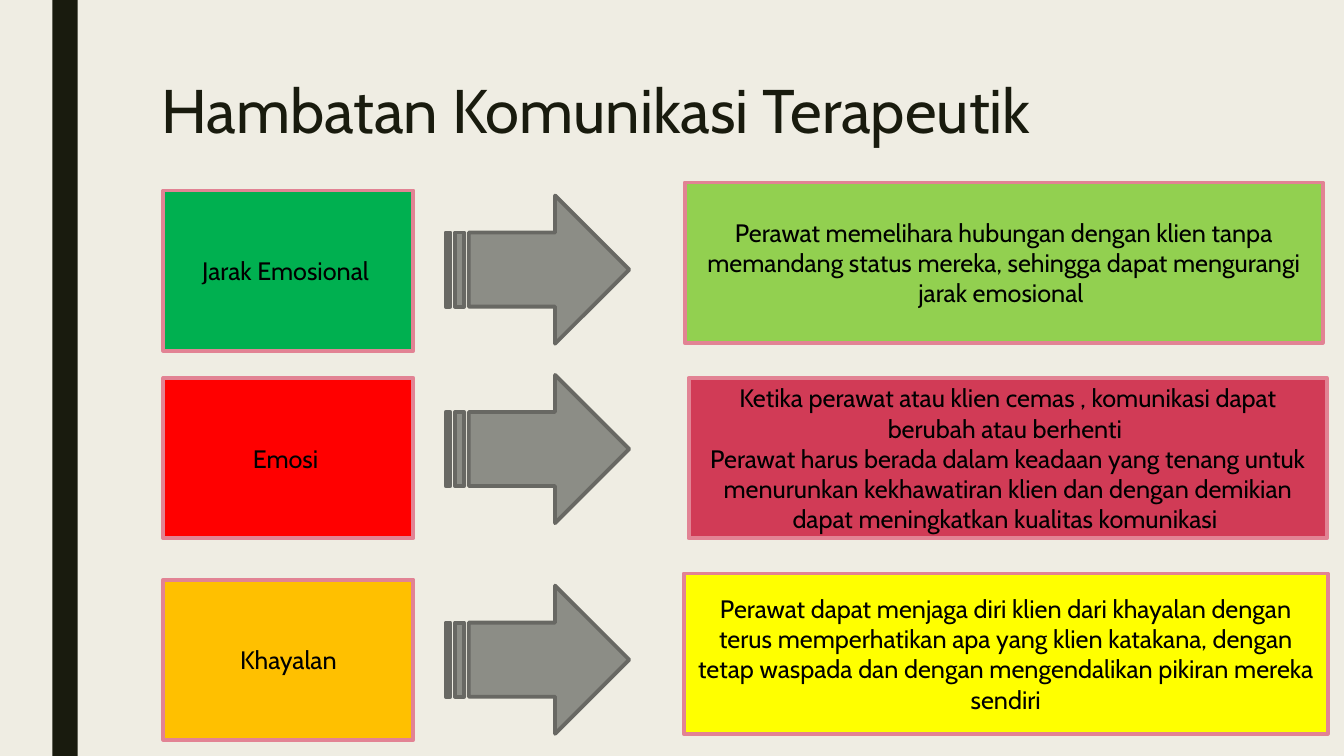
from pptx import Presentation
from pptx.dml.color import RGBColor
from pptx.enum.shapes import MSO_SHAPE
from pptx.enum.text import MSO_ANCHOR, MSO_AUTO_SIZE, PP_ALIGN
from pptx.util import Pt

RECT, ARROW = MSO_SHAPE.RECTANGLE, MSO_SHAPE.STRIPED_RIGHT_ARROW
TOP, MIDDLE = MSO_ANCHOR.TOP, MSO_ANCHOR.MIDDLE
LEFT, CENTER = PP_ALIGN.LEFT, PP_ALIGN.CENTER
NO_FIT = MSO_AUTO_SIZE.NONE

PX = 9144  # 100 px to the inch
THEME = {
    "font": "Cabin", "title": 44, "body": 18, "edge": 2.75,
    "paper": "EFEDE3", "ink": "191B0E", "text": "000000",
    "pink": "E28394", "grey": "8C8D86", "dark": "686863",
}


def add_box(kind, at, fill, line=None):
    box = slide.shapes.add_shape(kind, *[n * PX for n in at])
    box.shadow.inherit = False
    box.fill.solid()
    box.fill.fore_color.rgb = RGBColor.from_string(fill)
    if line:
        box.line.color.rgb = RGBColor.from_string(line)
        box.line.width = Pt(THEME["edge"])
    else:
        box.line.fill.background()
    return box


def set_text(shape, text, size, color, align, anchor):
    frame = shape.text_frame
    frame.text = text
    frame.word_wrap = True
    frame.auto_size = NO_FIT
    frame.vertical_anchor = anchor
    for para in frame.paragraphs:
        para.alignment = align
        for run in para.runs:
            run.font.name = THEME["font"]
            run.font.size = Pt(size)
            run.font.color.rgb = RGBColor.from_string(color)


deck = Presentation()
deck.slide_width, deck.slide_height = 1333 * PX, 750 * PX
slide = deck.slides.add_slide(deck.slide_layouts[5])
slide.background.fill.solid()
slide.background.fill.fore_color.rgb = RGBColor.from_string(THEME["paper"])

add_box(RECT, (52, 0, 25, 750), THEME["ink"])

title = slide.shapes.title
title.left, title.top, title.width, title.height = [
    n * PX for n in (150, 75, 1050, 162)]
set_text(title, "Hambatan Komunikasi Terapeutik",
         THEME["title"], THEME["ink"], LEFT, TOP)
title.text_frame.paragraphs[0].line_spacing = 0.89

# label, its top and fill; arrow top; answer's left, top, width, fill and text
rows = [
    ("Jarak Emosional ", 189, "00B050", 194, 679, 181, 633, "92D050",
     "Perawat memelihara hubungan dengan klien tanpa memandang status mereka, "
     "sehingga dapat mengurangi jarak emosional "),
    ("Emosi ", 375, "FF0000", 372, 683, 375, 633, "D13B56",
     "Ketika perawat atau klien cemas , komunikasi dapat berubah atau berhenti \n"
     "Perawat harus berada dalam keadaan yang tenang untuk menurunkan "
     "kekhawatiran klien dan dengan demikian dapat meningkatkan kualitas "
     "komunikasi "),
    ("Khayalan", 575, "FFC000", 581, 678, 569, 639, "FFFF00",
     "Perawat dapat menjaga diri klien dari khayalan dengan terus "
     "memperhatikan apa yang klien katakana, dengan tetap waspada dan dengan "
     "mengendalikan pikiran mereka sendiri"),
]
for label, top, fill, tip, left, head, width, tint, answer in rows:
    add_box(ARROW, (442, tip, 182, 147), THEME["grey"], THEME["dark"])
    for text, at, color in (
        (label, (162, top, 248, 159), fill),
        (answer, (left, head, width, 159), tint),
    ):
        box = add_box(RECT, at, color, THEME["pink"])
        set_text(box, text, THEME["body"], THEME["text"], CENTER, MIDDLE)

deck.save("out.pptx")
